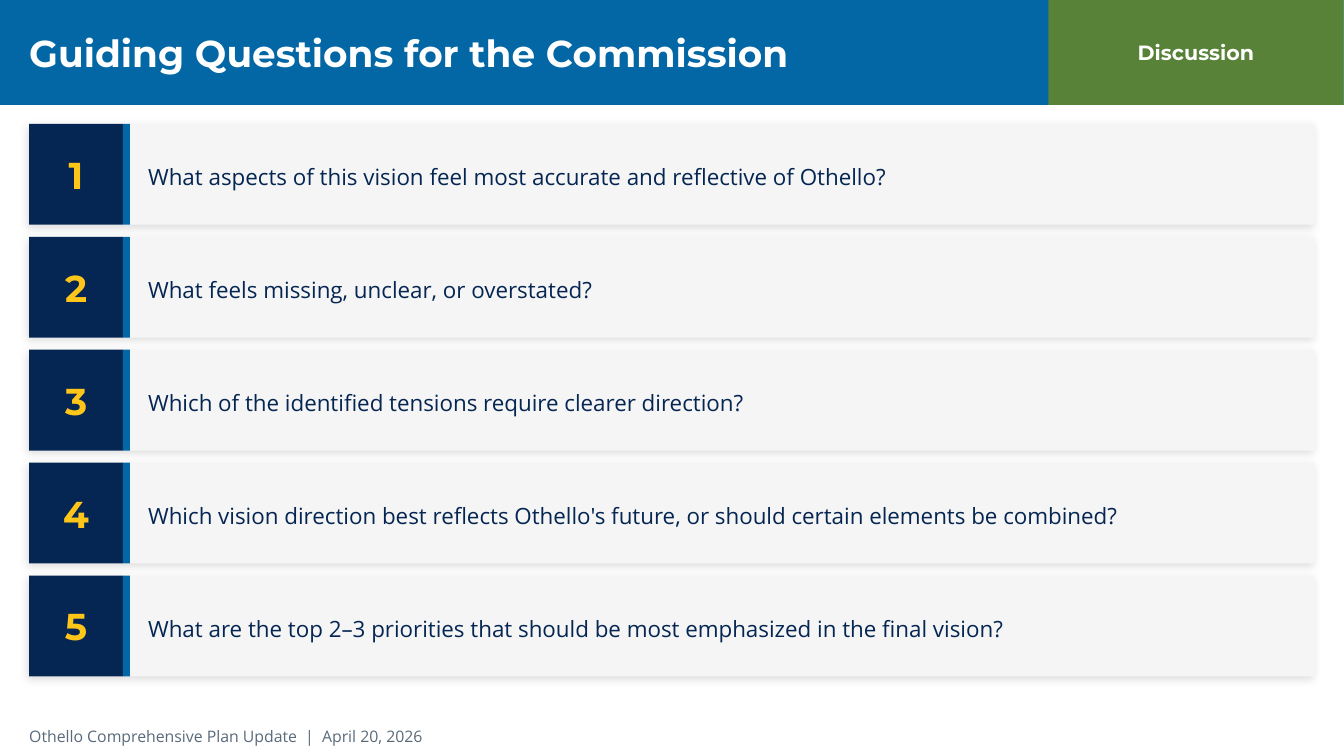
"""Build the discussion slide with five guiding questions for the commission."""
from lxml import etree
from pptx import Presentation, util as u
from pptx.dml.color import RGBColor
from pptx.enum import shapes, text
from pptx.oxml.ns import nsdecls

PX = 9144
BLUE, GREEN, NAVY, GOLD = "0367A5", "578238", "052652", "FFC61A"
WHITE, PALE, SLATE = "FFFFFF", "F5F5F5", "5A6A7A"
HEADING, BODY = "Montserrat", "Open Sans"
LEFT, CENTER = text.PP_ALIGN.LEFT, text.PP_ALIGN.CENTER

questions = [
    "What aspects of this vision feel most accurate and reflective of Othello?",
    "What feels missing, unclear, or overstated?",
    "Which of the identified tensions require clearer direction?",
    "Which vision direction best reflects Othello's future, or should certain elements be combined?",
    "What are the top 2–3 priorities that should be most emphasized in the final vision?",
]
SHADOW = (
    f'<a:effectLst {nsdecls("a")}><a:outerShdw blurRad="{u.Pt(6)}" dist="{u.Pt(2)}" '
    'dir="8100000" algn="bl" rotWithShape="0"><a:srgbClr val="000000">'
    '<a:alpha val="13000"/></a:srgbClr></a:outerShdw></a:effectLst>'
)

deck = Presentation()
deck.slide_width, deck.slide_height = u.Inches(13.333), u.Inches(7.5)
slide = deck.slides.add_slide(deck.slide_layouts[6])


def add_block(left, top, width, height, color):
    block = slide.shapes.add_shape(
        shapes.MSO_SHAPE.RECTANGLE, left * PX, top * PX, width * PX, height * PX)
    block.fill.solid()
    block.fill.fore_color.rgb = RGBColor.from_string(color)
    block.line.fill.background()
    block.shadow.inherit = False
    return block


def add_label(left, top, width, height, words, size, font, color, align=LEFT):
    label = slide.shapes.add_textbox(left * PX, top * PX, width * PX, height * PX)
    frame = label.text_frame
    frame.text = words
    frame.word_wrap = True
    frame.vertical_anchor = text.MSO_ANCHOR.MIDDLE
    frame.margin_left = frame.margin_top = frame.margin_right = frame.margin_bottom = 0
    line = frame.paragraphs[0]
    line.alignment = align
    style = line.runs[0].font
    style.name, style.size, style.bold = font, u.Pt(size), font == HEADING
    style.color.rgb = RGBColor.from_string(color)


add_block(0, 0, 1333, 104, BLUE)
add_label(29, 0, 1000, 104, "Guiding Questions for the Commission", 26.7, HEADING, WHITE)
add_block(1040, 0, 293, 104, GREEN)
add_label(1040, 0, 293, 104, "Discussion", 14.7, HEADING, WHITE, CENTER)
add_label(29, 717, 1275, 27, "Othello Comprehensive Plan Update  |  April 20, 2026", 11.3, BODY, SLATE)

for index, question in enumerate(questions):
    top = 123 + 112 * index
    card = add_block(29, top, 1275, 100, PALE)
    card_properties = card._element.spPr
    card_properties.replace(card_properties[-1], etree.fromstring(SHADOW))
    add_block(29, top, 93, 100, NAVY)
    add_label(29, top, 93, 100, str(index + 1), 26.7, HEADING, GOLD, CENTER)
    add_block(122, top, 7, 100, BLUE)
    add_label(147, top + 18, 1140, 69, question, 16, BODY, NAVY)

deck.save("out.pptx")
